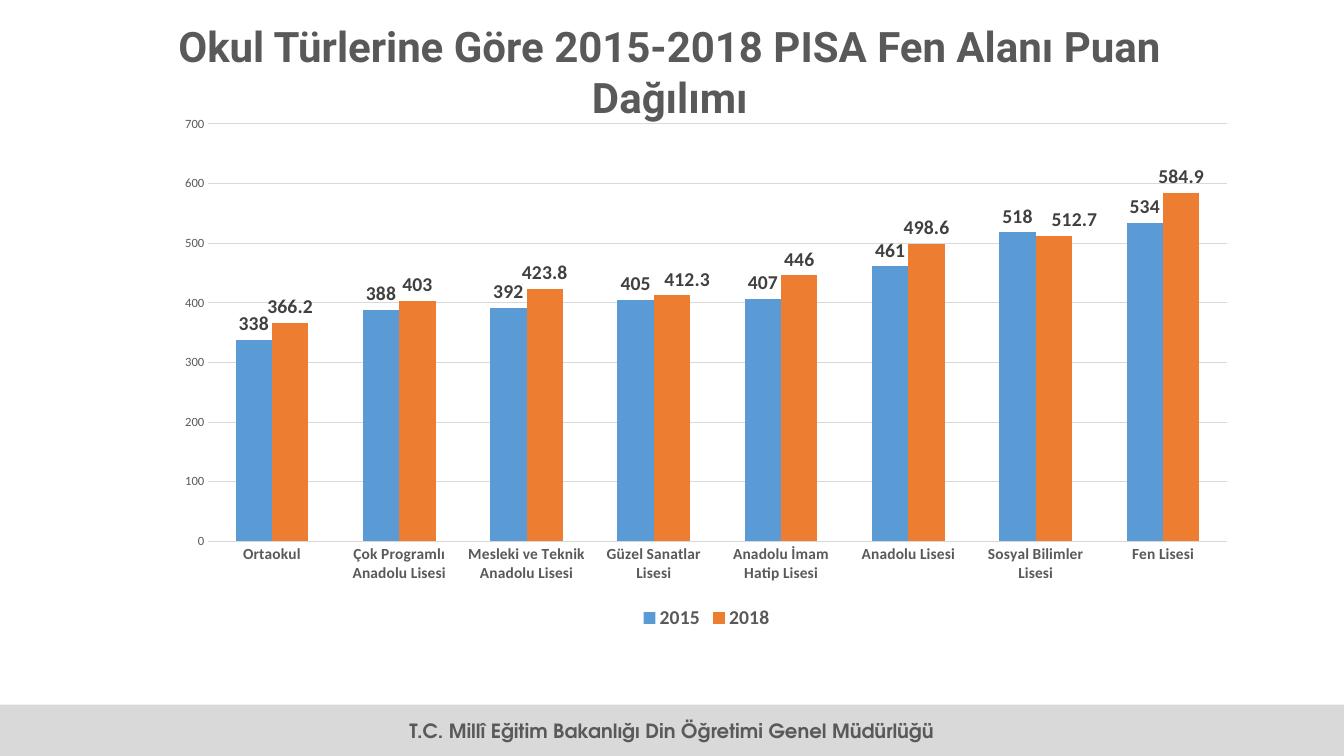
from lxml import etree
from pptx import Presentation
from pptx.chart.data import CategoryChartData
from pptx.dml.color import RGBColor
from pptx.enum.chart import XL_CHART_TYPE, XL_LABEL_POSITION, XL_LEGEND_POSITION, XL_TICK_MARK
from pptx.enum.shapes import MSO_SHAPE
from pptx.enum.text import MSO_ANCHOR, MSO_AUTO_SIZE, PP_ALIGN
from pptx.oxml.ns import qn
from pptx.util import Pt

PX = 9525  # EMU per px, 96 px to the inch
SLIDE_WIDTH, SLIDE_HEIGHT = 1280, 720

WHITE = RGBColor(0xFF, 0xFF, 0xFF)
GREY_TEXT = RGBColor(0x59, 0x59, 0x59)
LABEL_TEXT = RGBColor(0x40, 0x40, 0x40)
LIGHT_GREY = RGBColor(0xD9, 0xD9, 0xD9)
BLUE = RGBColor(0x5B, 0x9B, 0xD5)
ORANGE = RGBColor(0xED, 0x7D, 0x31)

COLUMNS = XL_CHART_TYPE.COLUMN_CLUSTERED
OUTSIDE_END = XL_LABEL_POSITION.OUTSIDE_END
LEGEND_BOTTOM = XL_LEGEND_POSITION.BOTTOM
NO_TICK = XL_TICK_MARK.NONE
RECTANGLE = MSO_SHAPE.RECTANGLE
MIDDLE, TOP = MSO_ANCHOR.MIDDLE, MSO_ANCHOR.TOP
GROW = MSO_AUTO_SIZE.SHAPE_TO_FIT_TEXT
CENTER = PP_ALIGN.CENTER

SCHOOL_TYPES = [
    "Ortaokul", "Çok Programlı Anadolu Lisesi", "Mesleki ve Teknik Anadolu Lisesi",
    "Güzel Sanatlar Lisesi", "Anadolu İmam Hatip Lisesi", "Anadolu Lisesi",
    "Sosyal Bilimler Lisesi", "Fen Lisesi",
]
SCORES = [
    ("2015", BLUE, [338, 388, 392, 405, 407, 461, 518, 534]),
    ("2018", ORANGE, [366.2, 403, 423.8, 412.3, 446, 498.6, 512.7, 584.9]),
]
# Labels of 2018 moved right, as a share of the chart width
LABEL_SHIFTS = {3: 0.014, 6: 0.019}
# Plot area inside the axes, as shares of the chart box
PLOT_LAYOUT = {"x": 0.041, "y": 0.032, "w": 0.938, "h": 0.792}


def emu(*lengths):
    return [round(length * PX) for length in lengths]


def style_font(font, name, size, color, bold=True):
    font.name, font.size, font.bold = name, Pt(size), bold
    font.color.rgb = color


def add_text(slide, box, text, name, size, anchor):
    shape = slide.shapes.add_textbox(*emu(*box))
    frame = shape.text_frame
    frame.word_wrap = True
    frame.vertical_anchor = anchor
    frame.text = text
    paragraph = frame.paragraphs[0]
    paragraph.alignment = CENTER
    style_font(paragraph.runs[0].font, name, size, GREY_TEXT)
    return frame


def make_layout(values, inner=False):
    layout = etree.Element(qn("c:layout"))
    manual = etree.SubElement(layout, qn("c:manualLayout"))
    if inner:
        etree.SubElement(manual, qn("c:layoutTarget"), val="inner")
        for axis in ("x", "y"):
            etree.SubElement(manual, qn(f"c:{axis}Mode"), val="edge")
    for key, value in values.items():
        etree.SubElement(manual, qn(f"c:{key}"), val=str(value))
    return layout


def add_title(slide, box):
    frame = add_text(slide, box, "Okul Türlerine Göre 2015-2018 PISA Fen Alanı Puan Dağılımı",
                     "Roboto", 30, TOP)
    frame.auto_size = GROW


def style_axes(chart):
    category_axis, value_axis = chart.category_axis, chart.value_axis
    for axis, size, bold in ((category_axis, 11, True), (value_axis, 9, False)):
        axis.major_tick_mark = axis.minor_tick_mark = NO_TICK
        axis.format.line.fill.background()
        style_font(axis.tick_labels.font, "Calibri", size, GREY_TEXT, bold)
    value_axis.minimum_scale, value_axis.maximum_scale = 0, 700
    value_axis.major_unit = 100
    gridline = value_axis.major_gridlines.format.line
    gridline.color.rgb = LIGHT_GREY
    gridline.width = Pt(0.75)


def style_series(series, color):
    series.format.fill.solid()
    series.format.fill.fore_color.rgb = color
    series.invert_if_negative = False
    labels = series.data_labels
    labels.show_value = True
    labels.position = OUTSIDE_END
    style_font(labels.font, "Calibri", 14, LABEL_TEXT)


def shift_labels(series):
    for index, shift in LABEL_SHIFTS.items():
        label = series.points[index].data_label
        style_font(label.font, "Calibri", 14, LABEL_TEXT)
        label.position = OUTSIDE_END
    for element in series.data_labels._element.findall(qn("c:dLbl")):
        index = element.find(qn("c:idx"))
        index.addnext(make_layout({"x": LABEL_SHIFTS[int(index.get("val"))], "y": 0}))


def add_score_chart(slide, box):
    data = CategoryChartData()
    data.categories = SCHOOL_TYPES
    for name, _, values in SCORES:
        data.add_series(name, values)
    chart = slide.shapes.add_chart(COLUMNS, *emu(*box), data).chart
    chart.has_title = False
    chart.font.name, chart.font.size = "Calibri", Pt(10)

    # Plot area and columns
    plot = chart.plots[0]
    plot.gap_width, plot.overlap = 150, 0
    plot.vary_by_categories = False
    plot_area = chart._chartSpace.chart.plotArea
    for layout in plot_area.findall(qn("c:layout")):
        plot_area.remove(layout)
    plot_area.insert(0, make_layout(PLOT_LAYOUT, inner=True))
    style_axes(chart)
    for series, (_, color, _) in zip(plot.series, SCORES):
        style_series(series, color)
    shift_labels(plot.series[1])

    # Legend
    chart.has_legend = True
    chart.legend.position = LEGEND_BOTTOM
    chart.legend.include_in_layout = False
    style_font(chart.legend.font, "Calibri", 14, GREY_TEXT)


def add_footer(slide, box):
    left, top, width, height = box
    band = slide.shapes.add_shape(RECTANGLE, *emu(*box))
    band.shadow.inherit = False
    band.fill.solid()
    band.fill.fore_color.rgb = LIGHT_GREY
    band.line.fill.background()
    add_text(slide, (left + 11, top + 6, width - 22, height - 12),
             "T.C. Millî Eğitim Bakanlığı Din Öğretimi Genel Müdürlüğü",
             "TeX Gyre Adventor", 14, MIDDLE)


def main():
    presentation = Presentation()
    presentation.slide_width, presentation.slide_height = emu(SLIDE_WIDTH, SLIDE_HEIGHT)
    slide = presentation.slides.add_slide(presentation.slide_layouts[6])
    slide.background.fill.solid()
    slide.background.fill.fore_color.rgb = WHITE
    add_footer(slide, (0, 671, SLIDE_WIDTH, 49))
    add_title(slide, (157, 15, 962, 59))
    add_score_chart(slide, (156, 102, 1034, 502))
    presentation.save("out.pptx")


if __name__ == "__main__":
    main()
